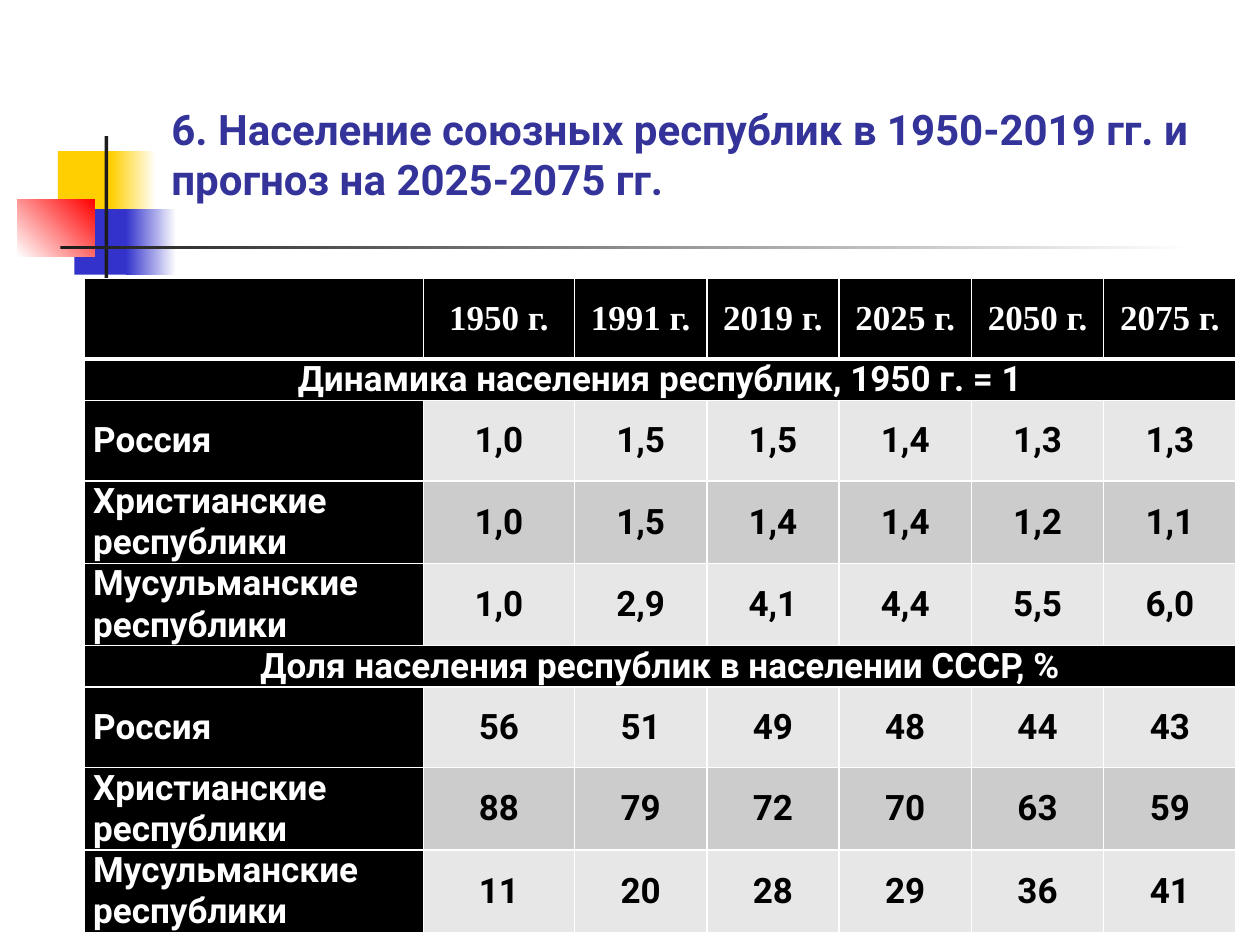
"""Build a slide with a population table for the union republics."""
from lxml.etree import SubElement
from pptx import Presentation
from pptx.dml.color import RGBColor
from pptx.enum.shapes import MSO_SHAPE
from pptx.enum.text import MSO_ANCHOR, MSO_AUTO_SIZE, PP_ALIGN
from pptx.oxml.ns import qn
from pptx.util import Inches, Pt

WHITE = RGBColor(0xFF, 0xFF, 0xFF)
BLACK = RGBColor(0, 0, 0)
YELLOW = RGBColor(0xFF, 0xCF, 0x01)
BLUE = RGBColor(0x33, 0x33, 0xCC)
NAVY = RGBColor(0x33, 0x33, 0x99)
RED = RGBColor(0xFF, 0, 0)
DARK = RGBColor(0x1C, 0x1C, 0x1C)
PALE = RGBColor(0xE7, 0xE7, 0xE7)
GREY = RGBColor(0xCC, 0xCC, 0xCC)

TITLE = "6. Население союзных республик в 1950-2019 гг. и прогноз на 2025-2075 гг."
YEARS = ["1950", "1991", "2019", "2025", "2050", "2075"]
GROUPS = ["Россия", "Христианские республики", "Мусульманские республики"]
PARTS = {
    "Динамика населения республик, 1950 г. = 1": [
        ["1,0", "1,5", "1,5", "1,4", "1,3", "1,3"],
        ["1,0", "1,5", "1,4", "1,4", "1,2", "1,1"],
        ["1,0", "2,9", "4,1", "4,4", "5,5", "6,0"],
    ],
    "Доля населения республик в населении СССР, %": [
        ["56", "51", "49", "48", "44", "43"],
        ["88", "79", "72", "70", "63", "59"],
        ["11", "20", "28", "29", "36", "41"],
    ],
}
BLOCKS = [
    (0.46, 1.2, 0.48, 0.52, [YELLOW]),
    (0.88, 1.2, 0.36, 0.52, [YELLOW, WHITE]),
    (0.59, 1.66, 0.46, 0.52, [BLUE]),
    (1, 1.66, 0.4, 0.52, [BLUE, WHITE]),
    (0.14, 1.58, 0.61, 0.46, [WHITE, RED], 45),
    (0.83, 1.08, 0.03, 1.15, [DARK]),
    (0.48, 1.95, 9, 0.03, [DARK, WHITE]),
]


class Painter:
    """Hold the text style and the current slide."""

    font = "Roboto"
    head_font = "Times New Roman"

    def __init__(self, slide):
        self.slide = slide

    def style(self, frame, size, color, font):
        """Format every run of a text frame."""
        for para in frame.paragraphs:
            for run in para.runs:
                run.font.size = Pt(size)
                run.font.bold = True
                run.font.name = font
                run.font.color.rgb = color

    def title(self, text, left, top, width, height):
        """Place and format the title."""
        shape = self.slide.shapes.title
        shape.left, shape.top = Inches(left), Inches(top)
        shape.width, shape.height = Inches(width), Inches(height)
        frame = shape.text_frame
        frame.text = text
        frame.auto_size = MSO_AUTO_SIZE.NONE
        frame.vertical_anchor = MSO_ANCHOR.BOTTOM
        frame.paragraphs[0].alignment = PP_ALIGN.LEFT
        self.style(frame, 24, NAVY, self.font)

    def block(self, left, top, width, height, colors, angle=0):
        """Draw a plain or gradient rectangle."""
        box = [Inches(n) for n in (left, top, width, height)]
        shape = self.slide.shapes.add_shape(MSO_SHAPE.RECTANGLE, *box)
        shape.shadow.inherit = False
        shape.line.fill.background()
        if len(colors) == 1:
            shape.fill.solid()
            shape.fill.fore_color.rgb = colors[0]
            return
        shape.fill.gradient()
        shape.fill.gradient_angle = angle
        for stop, color, place in zip(shape.fill.gradient_stops, colors, (0, 1)):
            stop.color.rgb = color
            stop.position = place

    def edges(self, cell, top, base):
        """Give a cell white borders."""
        props = cell._tc.get_or_add_tcPr()
        widths = {"a:lnL": 1, "a:lnR": 1, "a:lnT": top, "a:lnB": base}
        for spot, (tag, width) in enumerate(widths.items()):
            line = SubElement(props, qn(tag), w=str(Pt(width)))
            fill = SubElement(line, qn("a:solidFill"))
            SubElement(fill, qn("a:srgbClr"), val=str(WHITE))
            props.insert(spot, line)

    def cell(self, cell, text, fill, color, font, align):
        """Fill in and format one cell."""
        cell.fill.solid()
        cell.fill.fore_color.rgb = fill
        cell.margin_left = cell.margin_right = Inches(0.07)
        cell.margin_top = cell.margin_bottom = 0
        cell.vertical_anchor = MSO_ANCHOR.MIDDLE
        cell.text_frame.text = text
        cell.text_frame.paragraphs[0].alignment = align
        self.style(cell.text_frame, 20, color, font)

    def table(self, rows, left, top, widths):
        """Draw the table, with one-item rows as full-width bands."""
        size = Inches(sum(widths)), Inches(5.12)
        place = Inches(left), Inches(top)
        table = self.slide.shapes.add_table(len(rows), len(widths), *place, *size).table
        for col, width in zip(table.columns, widths):
            col.width = Inches(width)
        shade = PALE
        for r, row in enumerate(rows):
            band = len(row) == 1
            table.rows[r].height = Inches(0.32 if band else 0.64)
            shade = PALE if band or shade == GREY else GREY
            if band:
                shade = GREY
            for c in range(len(widths)):
                cell = table.cell(r, c)
                text = row[c] if c < len(row) else ""
                dark = r == 0 or band or c == 0
                fill, color = (BLACK, WHITE) if dark else (shade, BLACK)
                font = self.head_font if r == 0 else self.font
                side = c == 0 and not band
                align = PP_ALIGN.LEFT if side else PP_ALIGN.CENTER
                self.cell(cell, text, fill, color, font, align)
                self.edges(cell, 3 if r == 1 else 1, 3 if r == 0 else 1)
            if band:
                table.cell(r, 0).merge(table.cell(r, len(widths) - 1))


def main():
    """Build and save the slide."""
    deck = Presentation()
    deck.slide_width, deck.slide_height = Inches(10), Inches(7.5)
    paint = Painter(deck.slides.add_slide(deck.slide_layouts[5]))
    for block in BLOCKS:
        paint.block(*block)
    paint.title(TITLE, 1.26, 0.68, 8.52, 0.99)
    rows = [[""] + [f"{year} г." for year in YEARS]]
    for name, data in PARTS.items():
        rows.append([name])
        rows += [[group] + line for group, line in zip(GROUPS, data)]
    paint.table(rows, 0.67, 2.21, [2.69, 1.2] + [1.05] * 5)
    deck.save("out.pptx")


if __name__ == "__main__":
    main()
